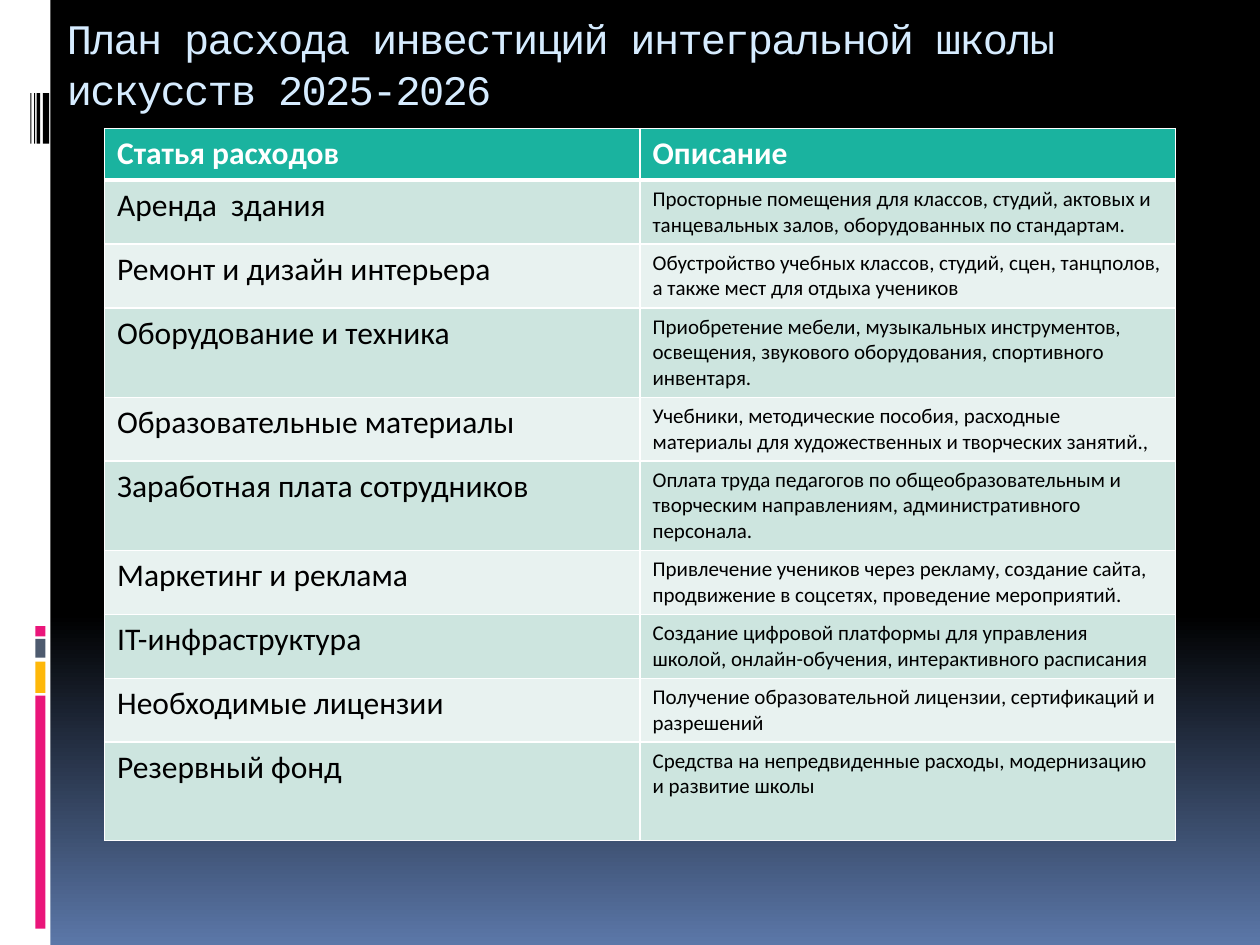
from typing import Any, NamedTuple

from copy import deepcopy

from lxml import etree
from pptx import Presentation
from pptx.dml.color import RGBColor
from pptx.enum.shapes import MSO_SHAPE
from pptx.enum.text import MSO_ANCHOR, MSO_AUTO_SIZE, PP_ALIGN
from pptx.oxml.ns import qn
from pptx.util import Inches, Pt

RECTANGLE = MSO_SHAPE.RECTANGLE
MIDDLE = MSO_ANCHOR.MIDDLE
NO_AUTOFIT = MSO_AUTO_SIZE.NONE
LEFT = PP_ALIGN.LEFT

WHITE = RGBColor(0xFF, 0xFF, 0xFF)
BLACK = RGBColor(0x00, 0x00, 0x00)
DUSK_BLUE = RGBColor(0x5B, 0x77, 0xA8)
PALE_BLUE = RGBColor(0xD6, 0xEC, 0xFF)
PINK = RGBColor(0xEA, 0x15, 0x7A)
AMBER = RGBColor(0xFE, 0xB8, 0x0A)
SLATE = RGBColor(0x4E, 0x5B, 0x6F)
TEAL = RGBColor(0x1A, 0xB3, 0x9F)
MINT = RGBColor(0xCD, 0xE5, 0xDF)
PALE_MINT = RGBColor(0xE8, 0xF2, 0xF0)

# Slide grid: 100 columns by 75 rows
SLIDE_WIDTH, SLIDE_HEIGHT = Inches(10), Inches(7.5)
COLUMN, ROW = SLIDE_WIDTH / 100, SLIDE_HEIGHT / 75


class Area(NamedTuple):
    """A place on the slide, in grid columns and rows."""
    left: float
    top: float
    width: float
    height: float

    def lengths(self) -> dict[str, int]:
        return {
            "left": round(self.left * COLUMN),
            "top": round(self.top * ROW),
            "width": round(self.width * COLUMN),
            "height": round(self.height * ROW),
        }


class Stripe(NamedTuple):
    area: Area
    color: RGBColor


class Expense(NamedTuple):
    item: str
    description: str


TITLE = "План расхода инвестиций интегральной школы искусств 2025-2026"
HEADER = Expense("Статья расходов", "Описание")
EXPENSES = [
    Expense("Аренда  здания", "Просторные помещения для классов, студий, актовых и "
            "танцевальных залов, оборудованных по стандартам."),
    Expense("Ремонт и дизайн интерьера", "Обустройство учебных классов, студий, сцен, "
            "танцполов, а также мест для отдыха учеников"),
    Expense("Оборудование и техника", "Приобретение мебели, музыкальных инструментов, "
            "освещения, звукового оборудования, спортивного инвентаря."),
    Expense("Образовательные материалы", "Учебники, методические пособия, расходные "
            "материалы для художественных и творческих занятий.,"),
    Expense("Заработная плата сотрудников", "Оплата труда педагогов по общеобразовательным "
            "и творческим направлениям, административного персонала."),
    Expense("Маркетинг и реклама", "Привлечение учеников через рекламу, создание сайта, "
            "продвижение в соцсетях, проведение мероприятий."),
    Expense("IT-инфраструктура", "Создание цифровой платформы для управления школой, "
            "онлайн-обучения, интерактивного расписания"),
    Expense("Необходимые лицензии", "Получение образовательной лицензии, сертификаций и "
            "разрешений"),
    Expense("Резервный фонд", "Средства на непредвиденные расходы, модернизацию и развитие "
            "школы"),
]

SIDEBAR = Stripe(Area(0, 0, 4, 75), WHITE)
ACCENTS = [
    Stripe(Area(2.8, top, 0.8, height), color)
    for top, height, color in [
        (55.2, 18.5, PINK), (52.5, 2.5, AMBER), (50.7, 1.5, SLATE), (49.7, 0.8, PINK)]
]
BARCODE = [
    Stripe(Area(left, 7.4, width, 4), BLACK)
    for left, width in [(3.4, 0.5), (2.9, 0.3), (2.7, 0.1), (2.4, 0.1)]
]
TITLE_AREA = Area(4.3, 0, 85, 10)
TABLE_AREA = Area(8.3, 10.2, 85, 44.7)
ROW_HEIGHT, LAST_ROW_HEIGHT = 4.1, 7.8


def apply_format(target: Any, values: dict[str, Any]) -> None:
    for name, value in values.items():
        setattr(target, name, value)


def paint_background(slide: Any) -> None:
    fill = slide.background.fill
    fill.gradient()
    fill.gradient_angle = 270
    stop_list = slide.background.fill._fill._gradFill.find(qn("a:gsLst"))
    stop_list.insert(1, deepcopy(stop_list[0]))
    shades = [(0, BLACK), (0.65, BLACK), (1, DUSK_BLUE)]
    for stop, (position, color) in zip(fill.gradient_stops, shades):
        stop.position = position
        stop.color.rgb = color


def draw_stripe(slide: Any, stripe: Stripe) -> None:
    shape = slide.shapes.add_shape(RECTANGLE, **stripe.area.lengths())
    shape.shadow.inherit = False
    shape.fill.solid()
    shape.fill.fore_color.rgb = stripe.color
    shape.line.fill.background()


def write_title(slide: Any) -> None:
    title = slide.shapes.title
    apply_format(title, TITLE_AREA.lengths())
    frame = title.text_frame
    frame.text = TITLE
    apply_format(frame, {"word_wrap": True, "auto_size": NO_AUTOFIT,
                         "vertical_anchor": MIDDLE})
    paragraph = frame.paragraphs[0]
    paragraph.alignment = LEFT
    run = paragraph.runs[0]
    apply_format(run.font, {"name": "Courier New", "size": Pt(24)})
    run.font.color.rgb = PALE_BLUE
    run.font._element.set("spc", "-100")
    # Bring the title in front of the sidebar
    title.element.getparent().append(title.element)


def draw_borders(cell: Any, widths: dict[str, float]) -> None:
    properties = cell._tc.get_or_add_tcPr()
    for side, points in widths.items():
        line = etree.SubElement(properties, qn(f"a:ln{side}"), w=str(Pt(points)))
        fill = etree.SubElement(line, qn("a:solidFill"))
        etree.SubElement(fill, qn("a:srgbClr"), val=str(WHITE))


def fill_cell(cell: Any, text: str, row: int, size: int) -> None:
    is_header = row == 0
    draw_borders(cell, {"L": 1, "R": 1, "T": 3 if row == 1 else 1,
                        "B": 3 if is_header else 1})
    cell.fill.solid()
    cell.fill.fore_color.rgb = TEAL if is_header else (MINT if row % 2 else PALE_MINT)
    cell.text = text
    font = cell.text_frame.paragraphs[0].runs[0].font
    apply_format(font, {"name": "Calibri", "size": Pt(size), "bold": is_header})
    font.color.rgb = WHITE if is_header else BLACK


def draw_expense_table(slide: Any) -> None:
    lines = [HEADER, *EXPENSES]
    table = slide.shapes.add_table(len(lines), 2, **TABLE_AREA.lengths()).table
    for row, expense in enumerate(lines):
        is_last = row == len(lines) - 1
        table.rows[row].height = round((LAST_ROW_HEIGHT if is_last else ROW_HEIGHT) * ROW)
        fill_cell(table.cell(row, 0), expense.item, row, 18)
        fill_cell(table.cell(row, 1), expense.description, row, 12 if row else 18)


def main() -> None:
    presentation = Presentation()
    apply_format(presentation, {"slide_width": SLIDE_WIDTH, "slide_height": SLIDE_HEIGHT})
    slide = presentation.slides.add_slide(presentation.slide_layouts[5])

    # Backdrop and side decoration
    paint_background(slide)
    for stripe in [SIDEBAR, *ACCENTS, *BARCODE]:
        draw_stripe(slide, stripe)

    # Content
    write_title(slide)
    draw_expense_table(slide)
    presentation.save("out.pptx")


if __name__ == "__main__":
    main()
